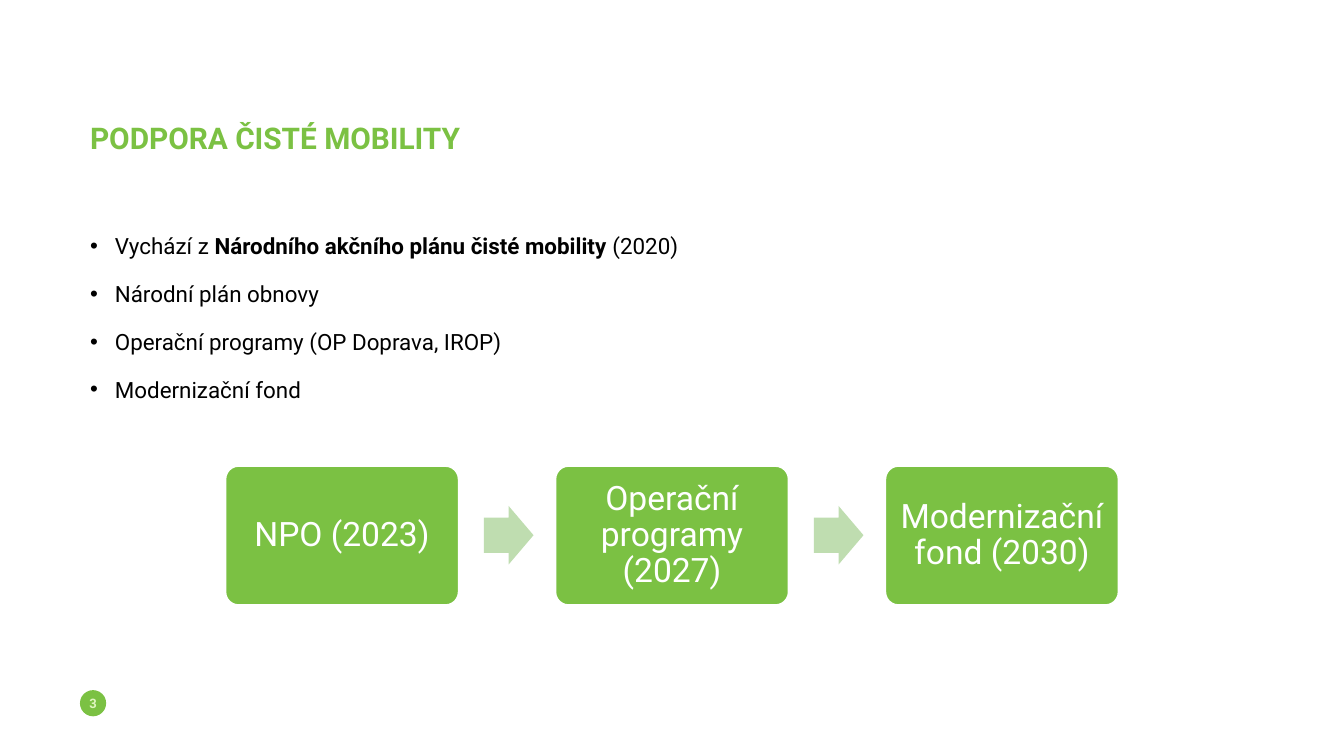
"""Build the clean mobility support slide with its three-step funding flow."""
from lxml import etree
from pptx import Presentation
from pptx.dml.color import RGBColor
from pptx.enum.shapes import MSO_SHAPE
from pptx.enum.text import MSO_ANCHOR, PP_ALIGN
from pptx.oxml.ns import qn
from pptx.util import Pt

PX = 4572
HUES = {"green": "7BC143", "pale": "BFDDB0", "lime": "DFF5C0",
        "white": "FFFFFF", "black": "000000"}

deck = Presentation()
deck.slide_width, deck.slide_height = 2000 * PX, 1125 * PX
slide = deck.slides.add_slide(deck.slide_layouts[6])


def add_form(kind, place, hue):
    form = slide.shapes.add_shape(kind, *[n * PX for n in place])
    form.shadow.inherit = False
    form.fill.solid()
    form.fill.fore_color.rgb = RGBColor.from_string(HUES[hue])
    form.line.fill.background()
    return form


def add_text(form, lines, size, hue, pad=0, align=PP_ALIGN.LEFT,
             anchor=MSO_ANCHOR.TOP):
    frame = form.text_frame
    frame.word_wrap = True
    frame.vertical_anchor = anchor
    frame.margin_left = frame.margin_right = pad * PX
    frame.margin_top = frame.margin_bottom = pad * PX
    for i, line in enumerate(lines):
        para = frame.add_paragraph() if i else frame.paragraphs[0]
        para.alignment = align
        for words, bold in line:
            run = para.add_run()
            run.text = words
            run.font.name = "Roboto"
            run.font.size = Pt(size)
            run.font.bold = bold
            run.font.color.rgb = RGBColor.from_string(HUES[hue])
    return frame.paragraphs


badge = add_form(MSO_SHAPE.OVAL, (119, 1027, 39, 39), "green")
add_text(badge, [[("3", True)]], 7, "lime", 0, PP_ALIGN.CENTER, MSO_ANCHOR.MIDDLE)

body = slide.shapes.add_textbox(134 * PX, 326 * PX, 1308 * PX, 642 * PX)
points = [
    [("Vychází z ", False), ("Národního akčního plánu čisté mobility ", True),
     ("(2020)", False)],
    [("Národní plán obnovy", False)],
    [("Operační programy (OP Doprava, IROP)", False)],
    [("Modernizační fond", False)],
]
for para in add_text(body, points, 12, "black"):
    para.line_spacing = 1.5
    para.space_after = Pt(4)
    props = para._p.get_or_add_pPr()
    props.set("marL", str(37 * PX))
    props.set("indent", str(-37 * PX))
    etree.SubElement(props, qn("a:buFont"), typeface="Arial")
    etree.SubElement(props, qn("a:buChar"), char="•")

title = slide.shapes.add_textbox(134 * PX, 178 * PX, 1308 * PX, 118 * PX)
add_text(title, [[("PODPORA ČISTÉ MOBILITY", True)]], 16, "green")

steps = ["NPO (2023)", "Operační programy (2027)", "Modernizační fond (2030)"]
for i, step in enumerate(steps):
    left = 334 + 491 * i
    box = add_form(MSO_SHAPE.ROUNDED_RECTANGLE, (left, 692, 350, 210), "green")
    box.adjustments[0] = 0.1
    box.line.color.rgb = RGBColor.from_string(HUES["white"])
    box.line.width = Pt(2)
    paras = add_text(box, [[(step, False)]], 18, "white", 14,
                     PP_ALIGN.CENTER, MSO_ANCHOR.MIDDLE)
    paras[0].line_spacing = 0.9
    if i < len(steps) - 1:
        arrow = add_form(MSO_SHAPE.RIGHT_ARROW, (left + 386, 753, 74, 87), "pale")
        arrow.adjustments[0] = 0.6
        arrow.adjustments[1] = 0.5

deck.save("out.pptx")
